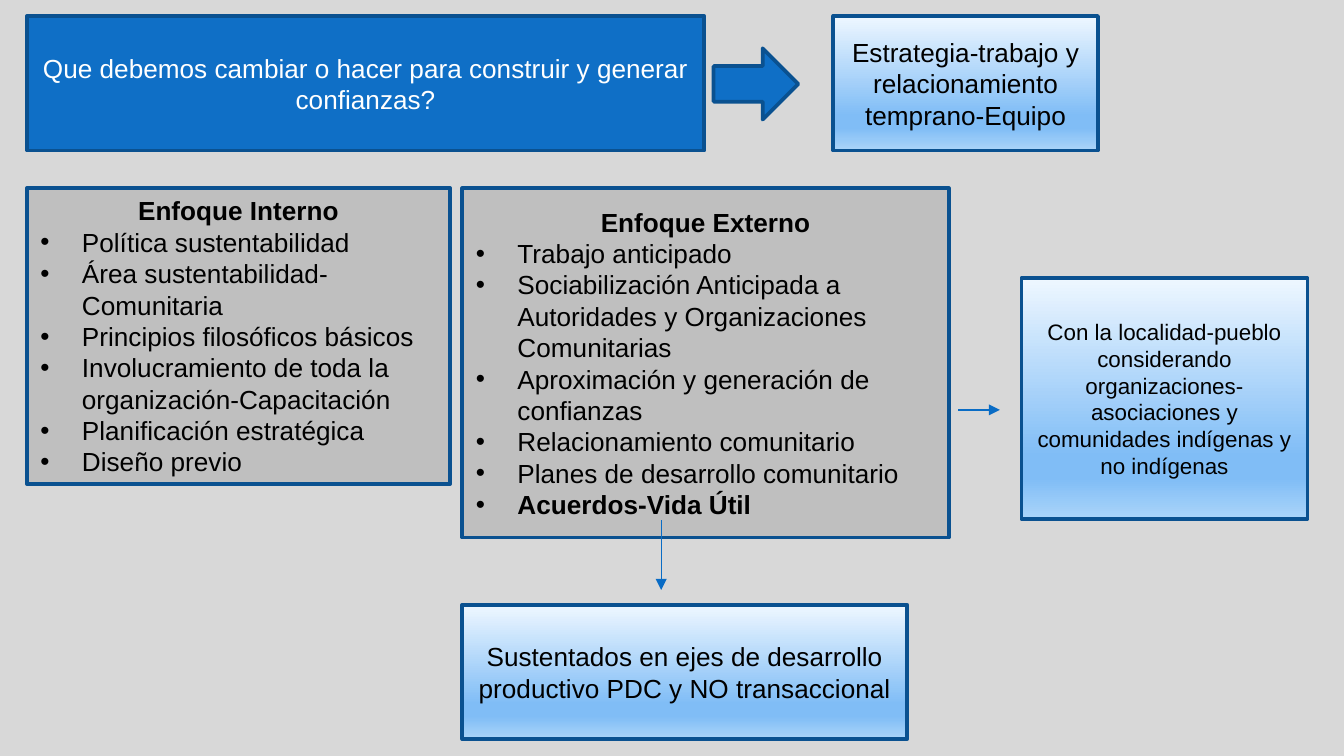
from lxml.etree import SubElement
from pptx import Presentation
from pptx.dml.color import RGBColor
from pptx.enum.shapes import MSO_CONNECTOR as Connector, MSO_SHAPE as Shape
from pptx.enum.text import MSO_ANCHOR as Anchor, MSO_AUTO_SIZE as AutoSize, PP_ALIGN as Align
from pptx.oxml.ns import qn
from pptx.util import Inches, Pt

COLORS = {
    "background": "D8D8D8",
    "blue": "0F6FC6",
    "border": "0A5190",
    "arrow": "096CC5",
    "panel": "BFBFBF",
    "black": "000000",
    "white": "FFFFFF",
}
# Position in percent and colour of each stop, from top to bottom
GRADIENT = [(0, "EEF7FF"), (74, "80BDF6"), (83, "80BDF6"), (100, "AAD4F9")]

INTERNAL = [
    "Política sustentabilidad",
    "Área sustentabilidad-Comunitaria",
    "Principios filosóficos básicos",
    "Involucramiento de toda la organización-Capacitación",
    "Planificación estratégica",
    "Diseño previo",
]
EXTERNAL = [
    "Trabajo anticipado",
    "Sociabilización Anticipada a Autoridades y Organizaciones Comunitarias",
    "Aproximación y generación de confianzas",
    "Relacionamiento comunitario",
    "Planes de desarrollo comunitario",
    "Acuerdos-Vida Útil",
]


def rgb(name):
    return RGBColor.from_string(COLORS[name])


def place(shape, left, top, width, height):
    shape.left, shape.top = Inches(left), Inches(top)
    shape.width, shape.height = Inches(width), Inches(height)


def style_box(shape, fill=None):
    """Give the shape its border and a solid fill, or the gradient if none is named."""
    shape.line.color.rgb = rgb("border")
    shape.line.width = Pt(2)
    if fill:
        shape.fill.solid()
        shape.fill.fore_color.rgb = rgb(fill)
        return
    shape.fill.gradient()
    shape.fill.gradient_angle = 270
    stops = shape.element.spPr.find(qn("a:gradFill")).find(qn("a:gsLst"))
    for stop in list(stops):
        stops.remove(stop)
    for position, color in GRADIENT:
        stop = SubElement(stops, qn("a:gs"), pos=str(position * 1000))
        SubElement(stop, qn("a:srgbClr"), val=color)


def prepare_text(shape):
    frame = shape.text_frame
    frame.word_wrap = True
    frame.auto_size = AutoSize.NONE
    frame.vertical_anchor = Anchor.MIDDLE
    return frame


def format_paragraph(paragraph, align, color="black", size=14, bold=False):
    paragraph.alignment = align
    paragraph.space_before = Pt(0)
    font = paragraph.font
    font.name, font.size, font.bold = "Arial", Pt(size), bold
    font.color.rgb = rgb(color)


def set_bullet(paragraph, bulleted):
    """Call before the font is set, so that the bullet comes first in the XML."""
    properties = paragraph._p.get_or_add_pPr()
    indent = Inches(0.31) if bulleted else 0
    properties.set("marL", str(indent))
    properties.set("indent", str(-indent))
    if bulleted:
        SubElement(properties, qn("a:buChar"), char="•")
    else:
        SubElement(properties, qn("a:buNone"))


def fill_title(title, text, box):
    place(title, *box)
    style_box(title, "blue")
    paragraph = prepare_text(title).paragraphs[0]
    paragraph.text = text
    format_paragraph(paragraph, Align.CENTER, "white")


def fill_panel(body, heading, items, box, bold_item=None):
    place(body, *box)
    style_box(body, "panel")
    frame = prepare_text(body)
    for index, text in enumerate([heading] + items):
        paragraph = frame.add_paragraph() if index else frame.paragraphs[0]
        paragraph.text = text
        set_bullet(paragraph, index > 0)
        format_paragraph(paragraph, Align.LEFT if index else Align.CENTER,
                         bold=text in (heading, bold_item))


def add_shape(slide, kind, box, fill=None):
    shape = slide.shapes.add_shape(kind, *map(Inches, box))
    shape.shadow.inherit = False
    style_box(shape, fill)
    return shape


def add_note(slide, text, box, size=14):
    paragraph = prepare_text(add_shape(slide, Shape.RECTANGLE, box)).paragraphs[0]
    paragraph.text = text
    format_paragraph(paragraph, Align.CENTER, size=size)


def add_arrow(slide, *ends):
    arrow = slide.shapes.add_connector(Connector.STRAIGHT, *map(Inches, ends))
    arrow.line.color.rgb = rgb("arrow")
    arrow.line.width = Pt(0.75)
    SubElement(arrow.line._get_or_add_ln(), qn("a:tailEnd"), type="triangle")
    SubElement(arrow._element.spPr, qn("a:effectLst"))


def main():
    # Widescreen page, 16:9
    presentation = Presentation()
    presentation.slide_width = Inches(10)
    presentation.slide_height = Inches(10) * 9 // 16
    slide = presentation.slides.add_slide(presentation.slide_layouts.get_by_name("Two Content"))
    slide.background.fill.solid()
    slide.background.fill.fore_color.rgb = rgb("background")
    title, internal, external = list(slide.placeholders)[:3]

    # Question and its answer
    fill_title(title, "Que debemos cambiar o hacer para construir y generar confianzas?",
               (0.2, 0.12, 5.04, 1))
    add_shape(slide, Shape.RIGHT_ARROW, (5.31, 0.36, 0.63, 0.53), "blue")
    add_note(slide, "Estrategia-trabajo y relacionamiento temprano-Equipo",
             (6.2, 0.12, 1.97, 1))

    # Internal and external approach
    fill_panel(internal, "Enfoque Interno", INTERNAL, (0.2, 1.4, 3.15, 2.2))
    fill_panel(external, "Enfoque Externo", EXTERNAL, (3.44, 1.4, 3.62, 2.6),
               bold_item=EXTERNAL[-1])

    # What the external approach leads to
    add_note(slide, "Sustentados en ejes de desarrollo productivo PDC y NO transaccional",
             (3.44, 4.5, 3.31, 1))
    add_arrow(slide, 4.92, 3.87, 4.92, 4.39)
    add_note(slide, "Con la localidad-pueblo considerando organizaciones-asociaciones "
             "y comunidades indígenas y no indígenas", (7.6, 2.07, 2.13, 1.79), size=12)
    add_arrow(slide, 7.13, 3.05, 7.44, 3.05)

    presentation.save("out.pptx")


if __name__ == "__main__":
    main()
